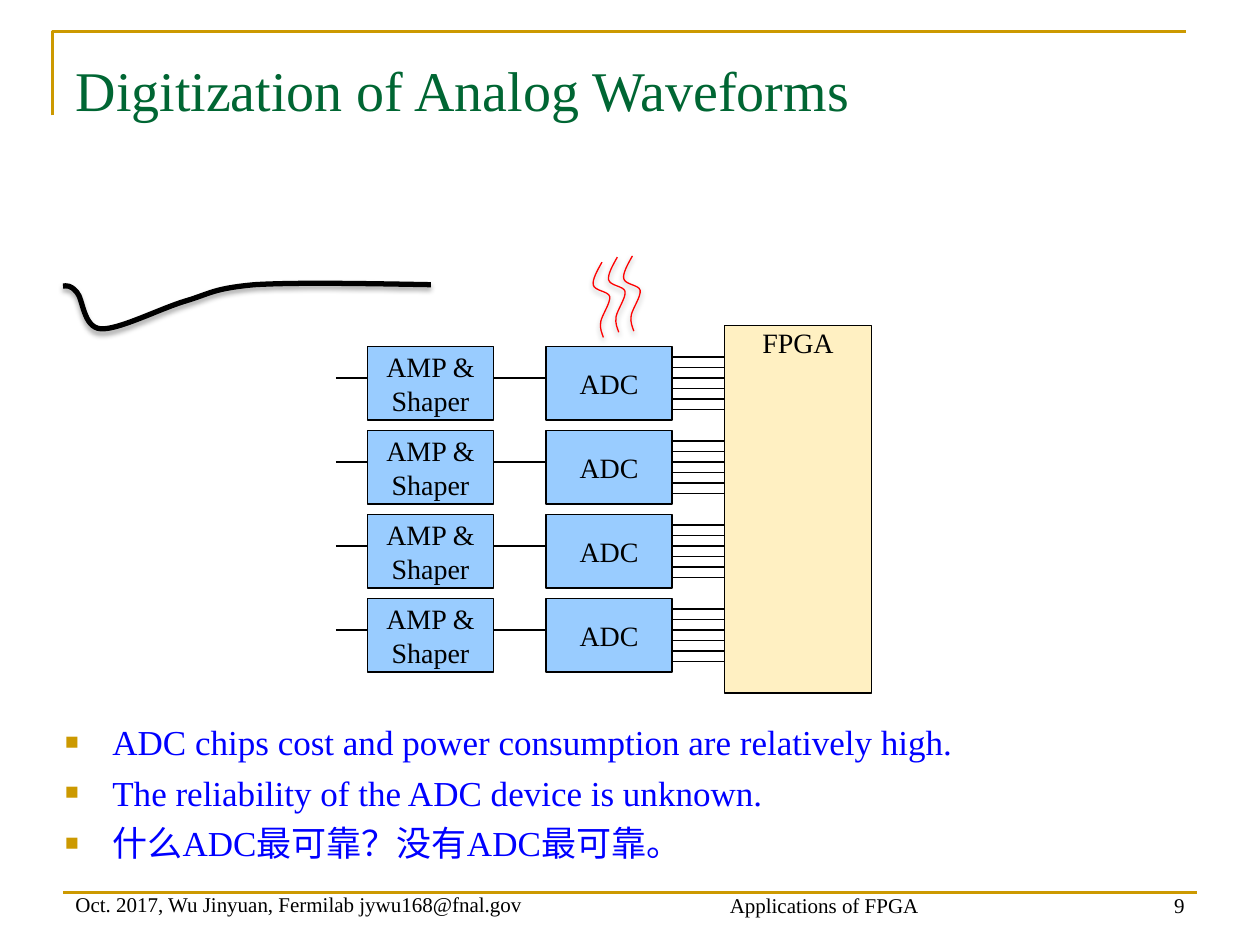
import pptx
import pptx.dml.color
import pptx.enum.shapes
import pptx.enum.text
import pptx.oxml
import pptx.oxml.ns
import pptx.util
from lxml import etree

Pt = pptx.util.Pt
ALIGN = pptx.enum.text.PP_ALIGN
ANCHOR = pptx.enum.text.MSO_ANCHOR
qn = pptx.oxml.ns.qn

COLORS = {
    "gold": "CC9900",
    "title": "006633",
    "list": "0000FF",
    "block": "99CCFF",
    "fpga": "FFF0C2",
    "ink": "000000",
    "heat": "FF0000",
}
FONT = "Times New Roman"
PULSE = [
    (0, 1.4), (2.2, 1.4), (4.3, 0.7), (7.9, 5), (11.5, 8.6), (11.5, 25.2),
    (21.6, 25.9), (31.7, 26.6), (55.4, 14.4), (69.8, 10.1), (84.2, 5.8),
    (85.7, 2.9), (109.4, 0.7), (132.5, -0.7), (171.4, 0), (210.2, 0.7),
]
WISP = [
    (5, 0), (2.2, 5), (-0.6, 10), (0, 13), (0.8, 16.5), (8.6, 16.5),
    (9.4, 19.6), (10.1, 23), (5, 30.2), (4.3, 34), (3.6, 38), (5, 40.5), (5.8, 43),
]


def rgb(name):
    return pptx.dml.color.RGBColor.from_string(COLORS[name])


def apply(target, values):
    for name, value in values.items():
        setattr(target, name, value)


def place(shape, box):
    apply(shape, dict(zip(("left", "top", "width", "height"), map(Pt, box))))


def write(frame, lines, size, color, align=ALIGN.LEFT):
    frame.text = "\n".join(lines)
    for para in frame.paragraphs:
        para.alignment = align
        for span in para.runs:
            apply(span.font, {"name": FONT, "size": Pt(size)})
            span.font.color.rgb = rgb(color)


def style_line(shape, color, width):
    shape.line.color.rgb = rgb(color)
    shape.line.width = Pt(width)


def add_line(shapes, start, end, color="ink", width=0.75):
    line = shapes.add_connector(
        pptx.enum.shapes.MSO_CONNECTOR.STRAIGHT, *map(Pt, start + end))
    style_line(line, color, width)
    etree.SubElement(line.element.spPr, qn("a:effectLst"))


def add_outline(shapes, points, color, width):
    points = [(Pt(x), Pt(y)) for x, y in points]
    builder = shapes.build_freeform(*points[0])
    builder.add_line_segments(points[1:], close=False)
    outline = builder.convert_to_shape()
    outline.fill.background()
    outline.shadow.inherit = False
    style_line(outline, color, width)
    return outline


def add_curve(shapes, origin, points, color, width):
    left, top = origin
    curve = add_outline(shapes, [(left + x, top + y) for x, y in points], color, width)
    segments = list(curve.element.iter(qn("a:lnTo")))
    for index in range(0, len(segments), 3):
        bezier = etree.Element(qn("a:cubicBezTo"))
        segments[index].addprevious(bezier)
        for segment in segments[index:index + 3]:
            bezier.append(segment[0])
            segment.getparent().remove(segment)
    effects = curve.element.spPr.find(qn("a:effectLst"))
    shadow = etree.SubElement(
        effects, qn("a:outerShdw"), blurRad=str(Pt(3.1)), dist=str(Pt(1.8)),
        dir="5400000", rotWithShape="0")
    shade = etree.SubElement(shadow, qn("a:srgbClr"), val=COLORS["ink"])
    etree.SubElement(shade, qn("a:alpha"), val="35000")


def add_block(shapes, box, lines, fill):
    block = shapes.add_shape(
        pptx.enum.shapes.MSO_SHAPE.RECTANGLE, *map(Pt, box))
    block.shadow.inherit = False
    block.fill.solid()
    block.fill.fore_color.rgb = rgb(fill)
    style_line(block, "ink", 0.75)
    write(block.text_frame, lines, 16, "ink", ALIGN.CENTER)
    apply(block.text_frame, {"word_wrap": False, "vertical_anchor": ANCHOR.MIDDLE})
    return block


def draw_frame(page, box):
    left, top, width, height = box
    add_outline(page.shapes, [(left, top + 48), (left, top), (left + width, top)],
                "gold", 1.5)
    base = top + height
    add_line(page.shapes, (left + 6, base), (left + 6 + width, base), "gold", 1.5)


def draw_footer(page, box):
    left, top, width, height = box
    parts = [
        ("Oct. 2017, Wu Jinyuan, Fermilab jywu168@fnal.gov", 0, 6, 276, 17.3, ALIGN.LEFT),
        ("Applications of FPGA", 282, 0, 306, height, ALIGN.CENTER),
        ("9", width - 54, 6, 54, 18, ALIGN.RIGHT),
    ]
    for text, x, y, part_width, part_height, align in parts:
        label = page.shapes.add_textbox(
            *map(Pt, (left + x, top + y, part_width, part_height)))
        write(label.text_frame, [text], 12, "ink", align)
        apply(label.text_frame, {"word_wrap": True, "vertical_anchor": ANCHOR.BOTTOM})


def fill_title(page, box):
    title = page.shapes.title
    place(title, box)
    write(title.text_frame, ["Digitization of Analog Waveforms"], 32, "title")
    apply(title.text_frame, {"vertical_anchor": ANCHOR.MIDDLE,
                             "auto_size": pptx.enum.text.MSO_AUTO_SIZE.NONE})


def fill_list(page, box):
    body = page.placeholders[1]
    place(body, box)
    write(body.text_frame, [
        "ADC chips cost and power consumption are relatively high.",
        "The reliability of the ADC device is unknown.",
        "什么ADC最可靠？没有ADC最可靠。",
    ], 20, "list")
    apply(body.text_frame, {"vertical_anchor": ANCHOR.TOP,
                            "auto_size": pptx.enum.text.MSO_AUTO_SIZE.NONE})
    for index, para in enumerate(body.text_frame.paragraphs):
        para.space_before = Pt(5 if index else 0)
        props = para._p.get_or_add_pPr()
        props.set("marL", str(Pt(27)))
        props.set("indent", str(Pt(-27)))
        bullet_color = etree.SubElement(props, qn("a:buClr"))
        etree.SubElement(bullet_color, qn("a:srgbClr"), val=COLORS["gold"])
        etree.SubElement(props, qn("a:buSzPct"), val="65000")
        etree.SubElement(props, qn("a:buChar"), char="■")


def draw_channel(shapes, box):
    left, top, width, height = box
    amp, adc, right = left + 18, left + 120, left + width
    middle = top + 18
    add_block(shapes, (amp, top, 72, height), ["AMP &", "Shaper"], "block")
    add_block(shapes, (adc, top, 72, height), ["ADC"], "block")
    add_line(shapes, (left, middle), (amp, middle))
    add_line(shapes, (amp + 72, middle), (adc, middle))
    for bit in range(6):
        y = top + 6 + 6 * bit
        add_line(shapes, (adc + 72, y), (right, y))


def draw_circuit(page, box):
    left, top, width, height = box
    shapes = page.shapes.add_group_shape().shapes
    for row in range(4):
        draw_channel(shapes, (left, top + 12 + 48 * row, width - 84, 42))
    fpga = add_block(shapes, (left + width - 84, top, 84, height), ["FPGA"], "fpga")
    apply(fpga.text_frame, {"vertical_anchor": ANCHOR.TOP,
                            "margin_top": 0, "margin_bottom": 0})


def draw_heat(page, box):
    left, top = box[:2]
    shapes = page.shapes.add_group_shape().shapes
    for x, y in ((0, 3.6), (8.8, 0.7), (17.4, 0)):
        add_curve(shapes, (left + x, top + y), WISP, "heat", 0.75)


def main():
    deck = pptx.Presentation()
    apply(deck, {"slide_width": Pt(720), "slide_height": Pt(540)})
    page = deck.slides.add_slide(deck.slide_layouts[1])
    draw_frame(page, (30, 18, 648, 492))
    draw_footer(page, (36, 504, 648, 24))
    fill_title(page, (36, 24, 558, 54))
    fill_list(page, (30, 408, 678, 96))
    draw_circuit(page, (192, 186, 306, 210))
    add_curve(page.shapes, (36, 162), PULSE, "ink", 3)
    draw_heat(page, (339, 146.2, 28, 47))
    deck.save("out.pptx")


if __name__ == "__main__":
    main()
